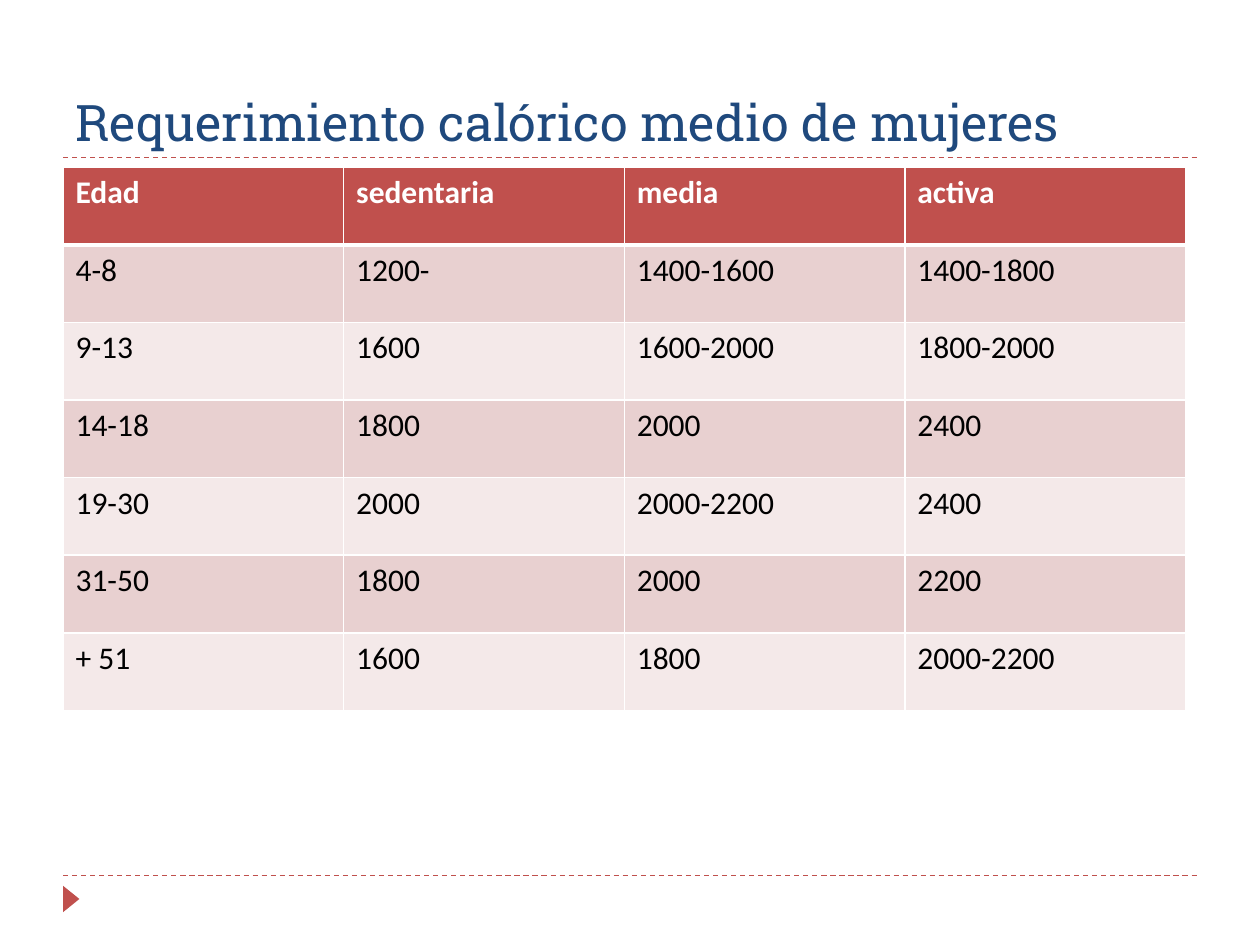
from lxml.etree import SubElement
from pptx import Presentation
from pptx.dml.color import RGBColor
from pptx.enum.dml import MSO_LINE
from pptx.enum.shapes import MSO_CONNECTOR, MSO_SHAPE
from pptx.enum.text import MSO_ANCHOR
from pptx.oxml.ns import qn
from pptx.util import Inches, Pt

COLORS = {
    "accent": "C0504D",
    "title": "1F497D",
    "odd_row": "E8D0D0",
    "even_row": "F4E9E9",
    "text": "000000",
    "white": "FFFFFF",
}
CALORIES = [
    ["Edad", "sedentaria", "media", "activa"],
    ["4-8", "1200-", "1400-1600", "1400-1800"],
    ["9-13", "1600", "1600-2000", "1800-2000"],
    ["14-18", "1800", "2000", "2400"],
    ["19-30", "2000", "2000-2200", "2400"],
    ["31-50", "1800", "2000", "2200"],
    ["+ 51", "1600", "1800", "2000-2200"],
]


def rgb(name):
    return RGBColor.from_string(COLORS[name])


def add_borders(cell, top, bottom):
    """Draw white cell borders; top and bottom are widths in points."""
    properties = cell._tc.get_or_add_tcPr()
    for side, width in (("L", 1), ("R", 1), ("T", top), ("B", bottom)):
        border = SubElement(properties, qn(f"a:ln{side}"), w=str(Pt(width)))
        fill = SubElement(border, qn("a:solidFill"))
        SubElement(fill, qn("a:srgbClr"), val=COLORS["white"])


prs = Presentation()
prs.slide_width, prs.slide_height = Inches(10), Inches(7.5)
slide = prs.slides.add_slide(prs.slide_layouts[6])
shapes = slide.shapes

# Dashed rules above the footer and below the title
for y in (6.95, 1.25):
    rule = shapes.add_connector(
        MSO_CONNECTOR.STRAIGHT, Inches(0.5), Inches(y), Inches(9.5), Inches(y))
    rule.line.color.rgb = rgb("accent")
    rule.line.width = Pt(0.75)
    rule.line.dash_style = MSO_LINE.DASH
    SubElement(rule._element.spPr, qn("a:effectLst"))

# Footer marker pointing right
marker = shapes.add_shape(
    MSO_SHAPE.ISOSCELES_TRIANGLE, Inches(0.46), Inches(7.07), Inches(0.21), Inches(0.13))
marker.rotation = 90
marker.shadow.inherit = False
marker.fill.solid()
marker.fill.fore_color.rgb = rgb("accent")
marker.line.fill.background()

# Title
title = shapes.add_textbox(Inches(0.5), Inches(0.17), Inches(9), Inches(1.08)).text_frame
title.word_wrap = True
title.vertical_anchor = MSO_ANCHOR.BOTTOM
title.text = "Requerimiento calórico medio de mujeres"
title_font = title.paragraphs[0].runs[0].font
title_font.name = "Roboto Slab"
title_font.size = Pt(28.8)
title_font.color.rgb = rgb("title")

# Calories by age and activity
table = shapes.add_table(
    len(CALORIES), len(CALORIES[0]),
    Inches(0.5), Inches(1.33), Inches(8.91), Inches(4.31)).table
for r, row in enumerate(CALORIES):
    is_header = r == 0
    row_fill = "accent" if is_header else "odd_row" if r % 2 else "even_row"
    for c, value in enumerate(row):
        cell = table.cell(r, c)
        add_borders(cell, top=3 if r == 1 else 1, bottom=3 if is_header else 1)
        cell.fill.solid()
        cell.fill.fore_color.rgb = rgb(row_fill)
        cell.text_frame.text = value
        font = cell.text_frame.paragraphs[0].runs[0].font
        font.name = "Calibri"
        font.size = Pt(18)
        font.bold = is_header
        font.color.rgb = rgb("white" if is_header else "text")

prs.save("out.pptx")
